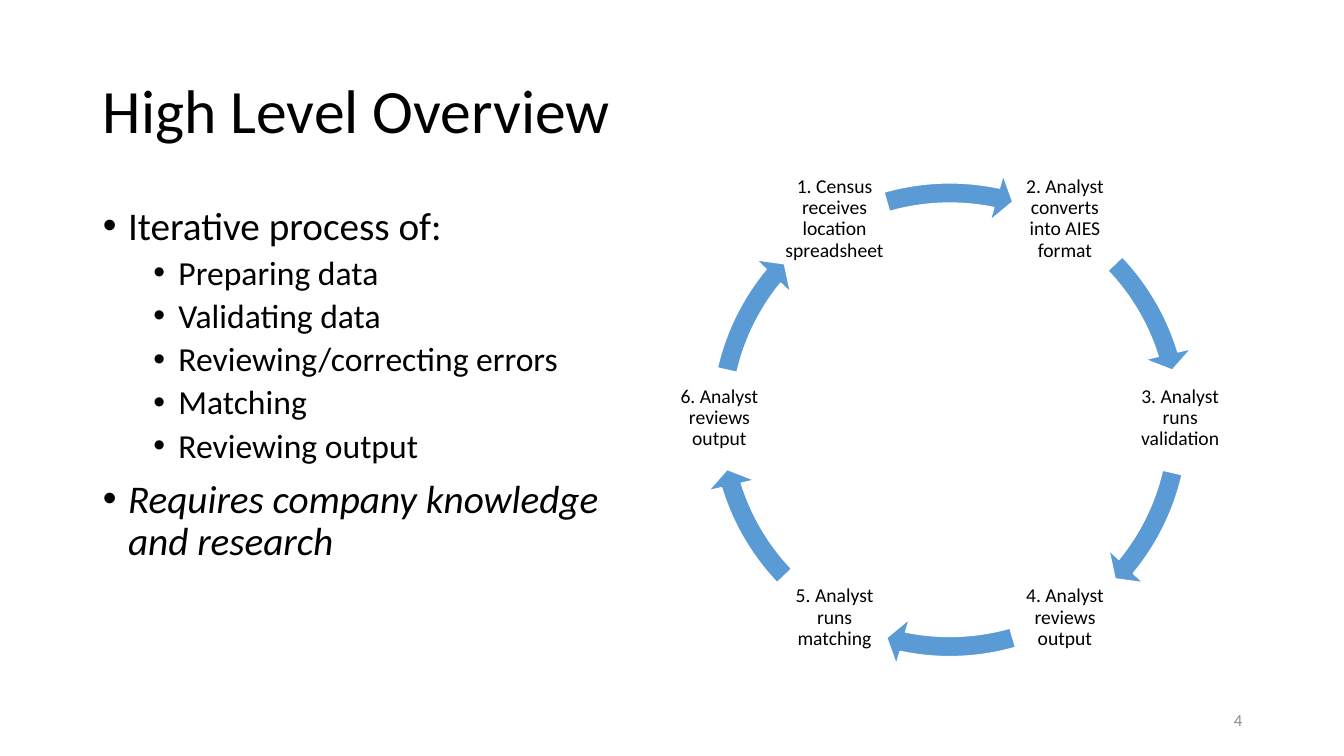
from math import cos, radians, sin

from lxml import etree
from pptx import Presentation
from pptx.dml.color import RGBColor
from pptx.enum.shapes import MSO_SHAPE
from pptx.enum.text import MSO_ANCHOR, MSO_AUTO_SIZE, PP_ALIGN
from pptx.oxml.ns import qn
from pptx.util import Inches, Pt

ARROW = MSO_SHAPE.CIRCULAR_ARROW
MIDDLE, TOP = MSO_ANCHOR.MIDDLE, MSO_ANCHOR.TOP
LEFT, CENTER, RIGHT = PP_ALIGN.LEFT, PP_ALIGN.CENTER, PP_ALIGN.RIGHT
NO_FIT = MSO_AUTO_SIZE.NONE
FONT = "Calibri"
BLACK, GRAY, BLUE, WHITE = "000000", "8C8C8C", "5B9BD5", "FFFFFF"

TITLE = "High Level Overview"
NUMBER = "4"
POINTS = [
    (0, "Iterative process of:", False),
    (1, "Preparing data", False),
    (1, "Validating data", False),
    (1, "Reviewing/correcting errors", False),
    (1, "Matching", False),
    (1, "Reviewing output", False),
    (0, "Requires company knowledge and research", True),
]
LEVELS = [(0.25, 28, 10), (0.75, 24, 5)]
STEPS = [
    "1. Census receives location spreadsheet",
    "2. Analyst converts into AIES format",
    "3. Analyst runs validation",
    "4. Analyst reviews output",
    "5. Analyst runs matching",
    "6. Analyst reviews output",
]
ARCS = [(253.98, 281.85), (316.38, 342.89), (12.94, 39.45)]
ARC_TOPS = [1.68, 1.68, 1.68, 1.65, 1.65, 1.68]
MID_X, MID_Y, RADIUS = 9.42, 4.15, 2.285
LABEL, RING = 1.02, 5


def color(code):
    return RGBColor.from_string(code)


def place(shape, left, top, width, height):
    shape.left, shape.top = Inches(left), Inches(top)
    shape.width, shape.height = Inches(width), Inches(height)


def style(para, size, align=LEFT, code=BLACK, italic=False):
    para.alignment = align
    para.line_spacing = 0.9
    for run in para.runs:
        font = run.font
        font.name, font.size, font.italic = FONT, Pt(size), italic
        font.color.rgb = color(code)


def frame(shape, anchor):
    text = shape.text_frame
    text.word_wrap = True
    text.auto_size = NO_FIT
    text.vertical_anchor = anchor
    return text


def bullet(para, indent):
    props = para._p.get_or_add_pPr()
    props.set("marL", str(Inches(indent)))
    props.set("indent", str(Inches(-0.25)))
    etree.SubElement(props, qn("a:buFont")).set("typeface", "Arial")
    etree.SubElement(props, qn("a:buChar")).set("char", "•")


def add_text(slide, box, words, size, align, code=BLACK, inset=None):
    shape = slide.shapes.add_textbox(*map(Inches, box))
    text = frame(shape, MIDDLE)
    if inset is not None:
        text.margin_left = text.margin_right = Inches(inset)
        text.margin_top = text.margin_bottom = Inches(inset)
    text.text = words
    style(text.paragraphs[0], size, align, code)


def add_list(body):
    place(body, 0.92, 2, 5.75, 4.76)
    text = frame(body, TOP)
    text.text = "\n".join(words for _, words, _ in POINTS)
    for i, (para, (level, _, italic)) in enumerate(zip(text.paragraphs, POINTS)):
        indent, size, before = LEVELS[level]
        para.level = level
        bullet(para, indent)
        para.space_before = Pt(before if i else 0)
        style(para, size, italic=italic)


def add_cycle(slide):
    for i, words in enumerate(STEPS):
        angle = radians(240 + 360 / len(STEPS) * i)
        left = MID_X + RADIUS * cos(angle) - LABEL / 2
        top = MID_Y + RADIUS * sin(angle) - LABEL / 2
        add_text(slide, (left, top, LABEL, LABEL), words, 14, CENTER, inset=0.02)

        half, slot = divmod(i, len(ARCS))
        start, end = ((a + 180 * half) % 360 * 0.6 for a in ARCS[slot])
        box = (MID_X - RING / 2, ARC_TOPS[i], RING, RING)
        arc = slide.shapes.add_shape(ARROW, *map(Inches, box))
        for k, value in enumerate((0.04, 2.503, end, start, 0.047)):
            arc.adjustments[k] = value
        arc.shadow.inherit = False
        arc.fill.solid()
        arc.fill.fore_color.rgb = color(BLUE)
        arc.line.color.rgb = color(WHITE)
        arc.line.width = Pt(1)


def main():
    deck = Presentation()
    deck.slide_width, deck.slide_height = Inches(13.33), Inches(7.5)
    slide = deck.slides.add_slide(deck.slide_layouts[1])
    title, body = slide.placeholders
    place(title, 0.92, 0.4, 11.5, 1.45)
    head = frame(title, MIDDLE)
    head.text = TITLE
    style(head.paragraphs[0], 44)
    add_list(body)
    add_cycle(slide)
    add_text(slide, (9.42, 6.95, 3, 0.4), NUMBER, 12, RIGHT, GRAY)
    deck.save("out.pptx")


if __name__ == "__main__":
    main()
